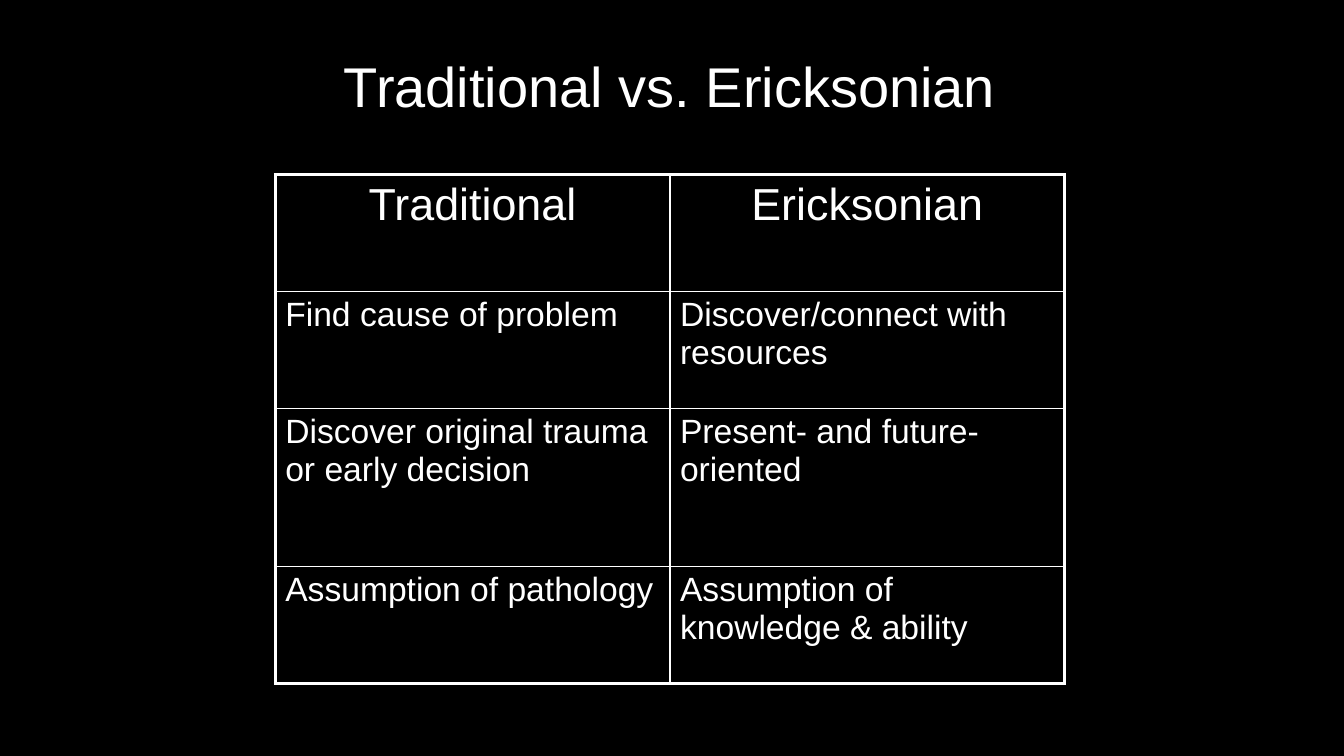
import pptx
import pptx.util
import pptx.dml.color
import pptx.enum.text
import pptx.oxml.ns
from lxml import etree

Inches, Pt = pptx.util.Inches, pptx.util.Pt
PP_ALIGN = pptx.enum.text.PP_ALIGN
ANCHOR = pptx.enum.text.MSO_ANCHOR
BLACK = pptx.dml.color.RGBColor(0x00, 0x00, 0x00)
WHITE = pptx.dml.color.RGBColor(0xFF, 0xFF, 0xFF)


def write(tf, text, size, align=PP_ALIGN.LEFT, line_spacing=None):
    p = tf.paragraphs[0]
    p.alignment = align
    p.line_spacing = line_spacing
    r = p.add_run()
    r.text = text
    r.font.name = "Arial"
    r.font.size = Pt(size)
    r.font.color.rgb = WHITE


def add_border(cell, side, width):
    tag = pptx.oxml.ns.qn
    ln = etree.SubElement(cell._tc.get_or_add_tcPr(), tag("a:ln" + side), w=str(Pt(width)))
    fill = etree.SubElement(ln, tag("a:solidFill"))
    etree.SubElement(fill, tag("a:srgbClr"), val=str(WHITE))


prs = pptx.Presentation()
prs.slide_width, prs.slide_height = Inches(13.33), Inches(7.5)
s = prs.slides.add_slide(prs.slide_layouts[6])
s.background.fill.solid()
s.background.fill.fore_color.rgb = BLACK

# Title
sp = s.shapes.add_textbox(Inches(2.39), Inches(0.56), Inches(8.5), Inches(0.65))
tf = sp.text_frame
tf.word_wrap = True
tf.vertical_anchor = ANCHOR.MIDDLE
write(tf, "Traditional vs. Ericksonian", 40, PP_ALIGN.CENTER, line_spacing=0.9)

# Comparison table
rows = [
    ("Traditional", "Ericksonian"),
    ("Find cause of problem", "Discover/connect with resources"),
    ("Discover original trauma or early decision", "Present- and future-oriented"),
    ("Assumption of pathology", "Assumption of knowledge & ability"),
]
row_heights = [1.16, 1.16, 1.57, 1.16]
table = s.shapes.add_table(len(rows), 2, Inches(2.73), Inches(1.73),
                           Inches(7.83), Inches(sum(row_heights))).table
table.first_row = table.horz_banding = False

for i, row in enumerate(rows):
    table.rows[i].height = Inches(row_heights[i])
    for j, text in enumerate(row):
        cell = table.cell(i, j)
        # Thick lines around the table, thin lines inside
        outer = {"L": j == 0, "R": j == 1, "T": i == 0, "B": i == len(rows) - 1}
        for side, is_outer in outer.items():
            add_border(cell, side, 2.25 if is_outer else 1)
        cell.fill.solid()
        cell.fill.fore_color.rgb = BLACK
        if i == 0:
            write(cell.text_frame, text, 32, PP_ALIGN.CENTER)
        else:
            write(cell.text_frame, text, 24)

prs.save("out.pptx")
